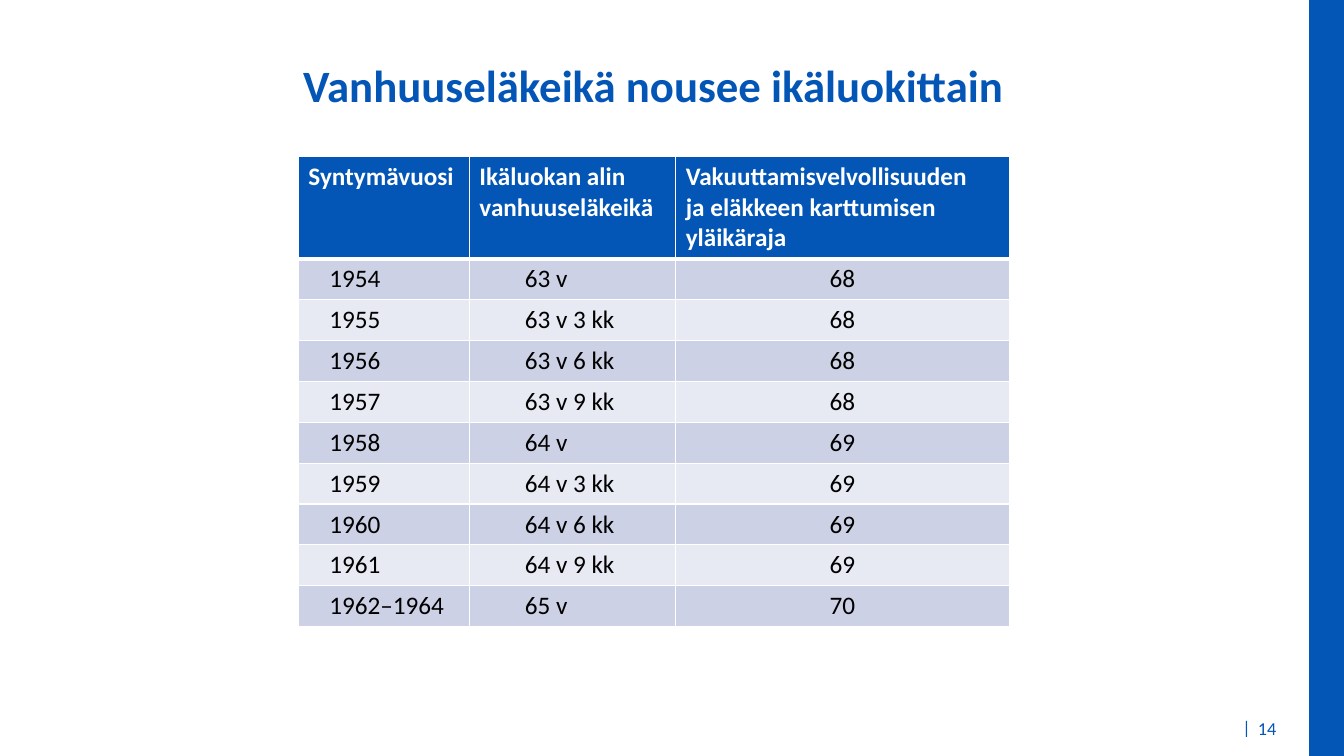
from lxml.etree import SubElement
from pptx import Presentation
from pptx.dml.color import RGBColor
from pptx.enum.shapes import MSO_SHAPE as SHAPE
from pptx.enum.text import MSO_ANCHOR as ANCHOR, PP_ALIGN as ALIGN
from pptx.oxml.ns import qn
from pptx.util import Cm, Pt

# Content
TITLE = "Vanhuuseläkeikä nousee ikäluokittain"
PAGE = "14"
HEADER = (
    "Syntymävuosi",
    "Ikäluokan alin\nvanhuuseläkeikä",
    "Vakuuttamisvelvollisuuden\nja eläkkeen karttumisen\nyläikäraja",
)
ROWS = [
    ("1954", "63 v", "68"),
    ("1955", "63 v 3 kk", "68"),
    ("1956", "63 v 6 kk", "68"),
    ("1957", "63 v 9 kk", "68"),
    ("1958", "64 v", "69"),
    ("1959", "64 v 3 kk", "69"),
    ("1960", "64 v 6 kk", "69"),
    ("1961", "64 v 9 kk", "69"),
    ("1962–1964", "65 v", "70"),
]

# Style and measures (cm)
COLORS = {"blue": "0356B5", "white": "FFFFFF", "black": "000000",
          "band_dark": "CCD1E5", "band_light": "E7E9F3"}
FONT = "Calibri"
SLIDE_W, SLIDE_H, BAR_W = 33.87, 19.05, 0.88
TABLE_X, TABLE_Y = 7.52, 3.94
COL_W = (4.31, 5.2, 8.41)
HEADER_H, ROW_H = 2.58, 1.03
BODY_INDENT = (0.78, 1.4, 0.25)
BODY_ALIGN = (ALIGN.LEFT, ALIGN.LEFT, ALIGN.CENTER)


def rgb(name):
    return RGBColor.from_string(COLORS[name])


def set_text(tf, text, size, color, bold=False, align=ALIGN.LEFT):
    tf.text = text
    for p in tf.paragraphs:
        p.alignment = align
        for r in p.runs:
            r.font.name, r.font.size, r.font.bold = FONT, Pt(size), bold
            r.font.color.rgb = rgb(color)


def add_text(slide, box, text, size, wrap=True, anchor=ANCHOR.TOP, **style):
    tf = slide.shapes.add_textbox(*map(Cm, box)).text_frame
    tf.word_wrap, tf.vertical_anchor = wrap, anchor
    set_text(tf, text, size, "blue", **style)


def set_borders(cell, top, bottom):
    tcPr = cell._tc.get_or_add_tcPr()
    for side, width in (("L", 1), ("R", 1), ("T", top), ("B", bottom)):
        ln = SubElement(tcPr, qn(f"a:ln{side}"), w=str(Pt(width)))
        fill = SubElement(ln, qn("a:solidFill"))
        SubElement(fill, qn("a:srgbClr"), val=COLORS["white"])


prs = Presentation()
prs.slide_width, prs.slide_height = Cm(SLIDE_W), Cm(SLIDE_H)
slide = prs.slides.add_slide(prs.slide_layouts[6])

# Side bar
bar = slide.shapes.add_shape(SHAPE.RECTANGLE, Cm(SLIDE_W - BAR_W), 0,
                             Cm(BAR_W), Cm(SLIDE_H))
bar.shadow.inherit = False
bar.fill.solid()
bar.fill.fore_color.rgb = rgb("blue")
bar.line.fill.background()

# Title and page number
add_text(slide, (0, 1.32, 32.94, 1.4), TITLE, 32, bold=True, align=ALIGN.CENTER)
add_text(slide, (31.06, 17.93, 0.74, 0.89), "|", 13, wrap=False)
add_text(slide, (31.45, 17.91, 1.12, 0.89), PAGE, 13, anchor=ANCHOR.MIDDLE)

# Table
lines = [HEADER] + ROWS
table = slide.shapes.add_table(
    len(lines), len(COL_W), Cm(TABLE_X), Cm(TABLE_Y),
    Cm(sum(COL_W)), Cm(HEADER_H + ROW_H * len(ROWS))).table
for col, width in zip(table.columns, COL_W):
    col.width = Cm(width)
for i, line in enumerate(lines):
    head = i == 0
    table.rows[i].height = Cm(HEADER_H if head else ROW_H)
    band = "blue" if head else ("band_light", "band_dark")[i % 2]
    for j, text in enumerate(line):
        cell = table.cell(i, j)
        set_borders(cell, top=3 if i == 1 else 1, bottom=3 if head else 1)
        cell.fill.solid()
        cell.fill.fore_color.rgb = rgb(band)
        if head:
            set_text(cell.text_frame, text, 18, "white", bold=True)
        else:
            cell.margin_left = Cm(BODY_INDENT[j])
            set_text(cell.text_frame, text, 18, "black", align=BODY_ALIGN[j])

prs.save("out.pptx")
